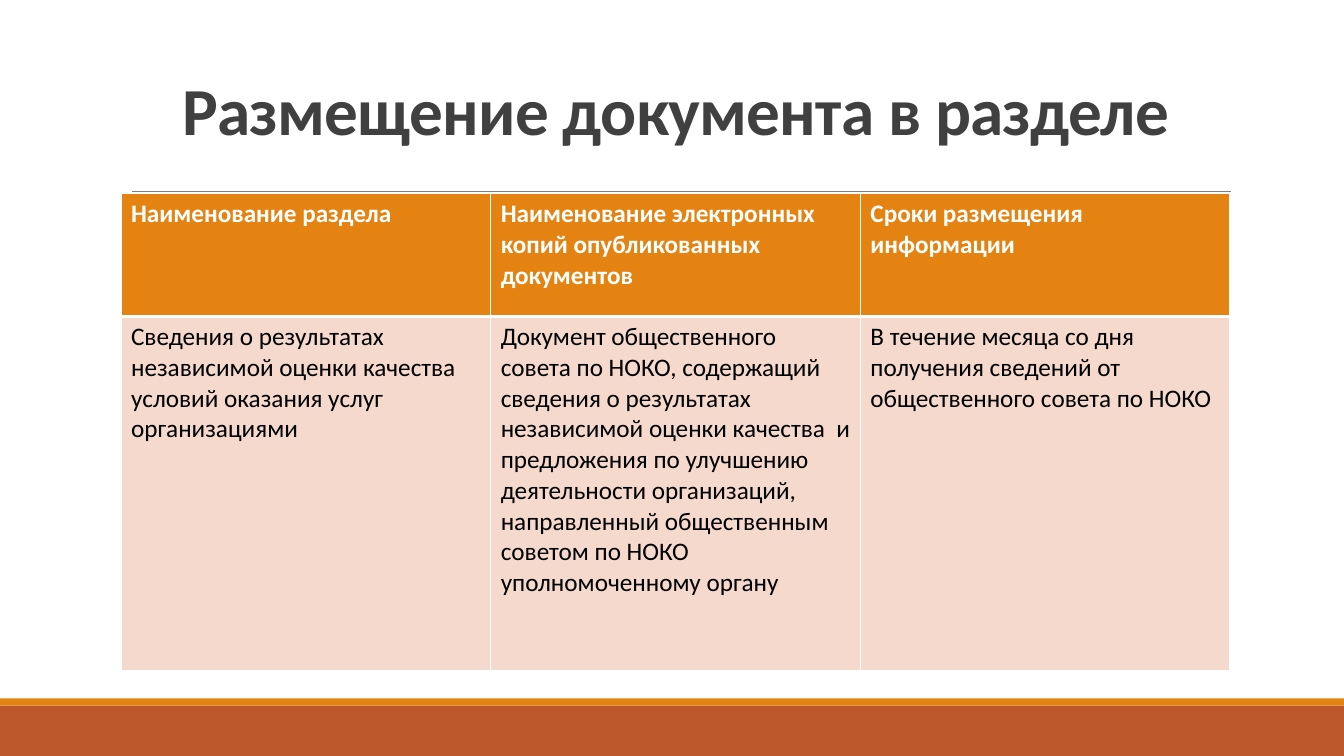
import pptx
import pptx.util
from lxml import etree
from pptx.dml.color import RGBColor
from pptx.enum.shapes import MSO_CONNECTOR, MSO_SHAPE
from pptx.enum.text import MSO_ANCHOR, PP_ALIGN
from pptx.oxml.ns import qn

# Content
TITLE = "Размещение документа в разделе"
ROWS = [
    ("Наименование раздела",
     "Наименование электронных копий опубликованных документов",
     "Сроки размещения информации"),
    ("Сведения о результатах независимой оценки качества условий оказания услуг организациями",
     "Документ общественного совета по НОКО, содержащий сведения о результатах "
     "независимой оценки качества  и предложения по улучшению деятельности организаций, "
     "направленный общественным советом по НОКО уполномоченному органу",
     "В течение месяца со дня получения сведений от общественного совета по НОКО"),
]

# Style
FONT = "Calibri"
WHITE = RGBColor(0xFF, 0xFF, 0xFF)
BLACK = RGBColor(0x00, 0x00, 0x00)
DARK_GREY = RGBColor(0x40, 0x40, 0x40)
RULE_GREY = RGBColor(0x80, 0x80, 0x80)
ORANGE = RGBColor(0xE4, 0x83, 0x12)
RUST = RGBColor(0xBD, 0x58, 0x2C)
PALE_PINK = RGBColor(0xF5, 0xD9, 0xCC)

# Layout, in inches
WIDTH, HEIGHT = 13.33, 7.5
LEFT, CONTENT_WIDTH = 1.2, 11
TABLE_TOP = 1.92
ROW_HEIGHTS = (1.22, 3.51)
FOOTER_TOP, STRIPE_HEIGHT = 7, 0.07
RULE_LEFT, RULE_RIGHT, RULE_TOP = 1.31, 12.21, 1.9


def inches(*lengths):
    return [pptx.util.Inches(length) for length in lengths]


def add_band(slide, top, height, color):
    band = slide.shapes.add_shape(MSO_SHAPE.RECTANGLE, *inches(0, top, WIDTH, height))
    band.shadow.inherit = False
    band.fill.solid()
    band.fill.fore_color.rgb = color
    band.line.fill.background()


def add_rule(slide):
    rule = slide.shapes.add_connector(
        MSO_CONNECTOR.STRAIGHT, *inches(RULE_LEFT, RULE_TOP, RULE_RIGHT, RULE_TOP))
    rule.line.color.rgb = RULE_GREY
    rule.line.width = pptx.util.Pt(0.5)
    etree.SubElement(rule._element.spPr, qn("a:effectLst"))


def set_title(slide):
    title = slide.shapes.title
    title.left, title.top, title.width, title.height = inches(LEFT, 0.31, CONTENT_WIDTH, 1.22)
    frame = title.text_frame
    frame.text = TITLE
    frame.word_wrap = True
    frame.vertical_anchor = MSO_ANCHOR.BOTTOM
    paragraph = frame.paragraphs[0]
    paragraph.alignment = PP_ALIGN.CENTER
    paragraph.line_spacing = 0.85
    set_font(paragraph, 48, DARK_GREY, True)
    paragraph.runs[0].font._element.set("spc", "-50")


def set_font(paragraph, size, color, bold):
    font = paragraph.font
    font.name, font.size, font.bold = FONT, pptx.util.Pt(size), bold
    font.color.rgb = color


def set_borders(cell, widths):
    properties = cell._tc.get_or_add_tcPr()
    for index, (side, width) in enumerate(widths.items()):
        border = etree.Element(qn(f"a:ln{side}"), w=str(pptx.util.Pt(width)))
        fill = etree.SubElement(border, qn("a:solidFill"))
        etree.SubElement(fill, qn("a:srgbClr"), val=str(WHITE))
        properties.insert(index, border)


def add_section_table(slide):
    columns = len(ROWS[0])
    table = slide.shapes.add_table(
        len(ROWS), columns,
        *inches(LEFT, TABLE_TOP, CONTENT_WIDTH, sum(ROW_HEIGHTS))).table
    for column in table.columns:
        column.width = pptx.util.Inches(CONTENT_WIDTH / columns)
    for row_index, texts in enumerate(ROWS):
        header = row_index == 0
        table.rows[row_index].height = pptx.util.Inches(ROW_HEIGHTS[row_index])
        for column_index, text in enumerate(texts):
            cell = table.cell(row_index, column_index)
            cell.text = text
            cell.fill.solid()
            cell.fill.fore_color.rgb = ORANGE if header else PALE_PINK
            set_font(cell.text_frame.paragraphs[0], 18, WHITE if header else BLACK, header)
            # The edge shared by header and body is the thick one
            set_borders(cell, {"L": 1, "R": 1, "T": 1 if header else 3, "B": 3 if header else 1})


def main():
    presentation = pptx.Presentation()
    presentation.slide_width, presentation.slide_height = inches(WIDTH, HEIGHT)
    slide = presentation.slides.add_slide(presentation.slide_layouts.get_by_name("Title Only"))

    # Footer bands and the line under the title
    add_band(slide, FOOTER_TOP, HEIGHT - FOOTER_TOP, RUST)
    add_band(slide, FOOTER_TOP - STRIPE_HEIGHT, STRIPE_HEIGHT, ORANGE)
    add_rule(slide)

    # Title and table
    set_title(slide)
    add_section_table(slide)
    presentation.save("out.pptx")


if __name__ == "__main__":
    main()
